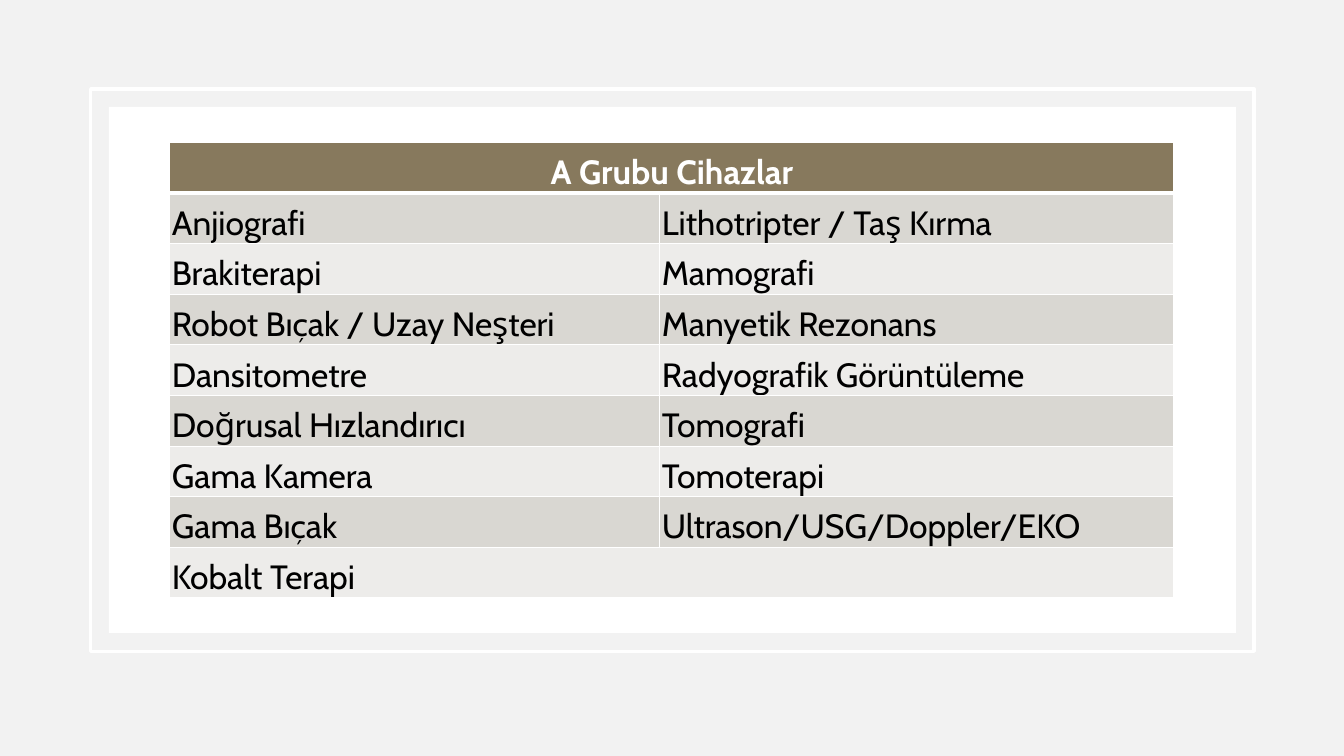
from dataclasses import dataclass

from lxml import etree
from pptx import Presentation
from pptx import util as u
from pptx.dml.color import RGBColor
from pptx.enum import shapes, text
from pptx.oxml import ns

Pt = u.Pt


# Colours and type sizes
@dataclass(frozen=True)
class Theme:
    back: str = "F2F2F2"
    white: str = "FFFFFF"
    ink: str = "000000"
    head: str = "87795D"
    bands: tuple = ("D9D7D2", "EDECEA")
    font: str = "Cabin"
    size: int = 24
    thin: float = 1
    thick: float = 3
    frame: float = 2.5


# Device names, left and right column
TITLE = "A Grubu Cihazlar"
PAIRS = [
    ("Anjiografi", "Lithotripter / Taş Kırma"),
    ("Brakiterapi", "Mamografi"),
    ("Robot Bıçak / Uzay Neşteri", "Manyetik Rezonans"),
    ("Dansitometre", "Radyografik Görüntüleme"),
    ("Doğrusal Hızlandırıcı", "Tomografi"),
    ("Gama Kamera", "Tomoterapi"),
    ("Gama Bıçak", "Ultrason/USG/Doppler/EKO"),
    ("Kobalt Terapi",),
]


def rgb(code):
    return RGBColor.from_string(code)


def apply(item, form):
    for key, value in form.items():
        setattr(item, key, value)


class Deck:
    def __init__(self, theme):
        self.theme = theme
        self.show = Presentation()
        apply(self.show, {"slide_width": Pt(960), "slide_height": Pt(540)})
        self.slide = self.show.slides.add_slide(self.show.slide_layouts[6])
        self.paint(self.slide.background.fill, theme.back)

    def paint(self, fill, code):
        fill.solid()
        fill.fore_color.rgb = rgb(code)

    def panel(self, left, top, width, height, fill=None, line=None):
        box = self.slide.shapes.add_shape(
            shapes.MSO_SHAPE.RECTANGLE, Pt(left), Pt(top), Pt(width), Pt(height))
        box.shadow.inherit = False
        if fill:
            self.paint(box.fill, fill)
        else:
            box.fill.background()
        if line:
            self.paint(box.line.fill, line)
            box.line.width = Pt(self.theme.frame)
        else:
            box.line.fill.background()

    def edge(self, cell, widths):
        props = cell._tc.get_or_add_tcPr()
        for spot, (side, width) in enumerate(zip("LRTB", widths)):
            line = etree.Element(ns.qn(f"a:ln{side}"), w=str(Pt(width)))
            fill = etree.SubElement(line, ns.qn("a:solidFill"))
            etree.SubElement(fill, ns.qn("a:srgbClr"), val=self.theme.white)
            props.insert(spot, line)

    def label(self, cell, words, color, bold, align):
        para = cell.text_frame.paragraphs[0]
        para.alignment = align
        run = para.add_run()
        run.text = words
        apply(run.font, {"name": self.theme.font, "size": Pt(self.theme.size),
                         "bold": bold})
        run.font.color.rgb = rgb(color)

    def table(self, left, top, cols, high, rows):
        look = self.theme
        grid = self.slide.shapes.add_table(
            len(rows), len(cols), Pt(left), Pt(top),
            Pt(sum(cols)), Pt(high * len(rows))).table
        apply(grid, {"first_row": False, "horz_banding": False})
        for col, width in zip(grid.columns, cols):
            col.width = Pt(width)
        form = {"margin_left": Pt(1.5), "margin_right": Pt(1.5),
                "margin_top": Pt(1.5), "margin_bottom": 0,
                "vertical_anchor": text.MSO_ANCHOR.BOTTOM}
        for r, names in enumerate(rows):
            grid.rows[r].height = Pt(high)
            head = r == 0
            above = look.thick if r == 1 else look.thin
            below = look.thick if head else look.thin
            for c in range(len(cols)):
                cell = grid.cell(r, c)
                apply(cell, form)
                self.paint(cell.fill, look.head if head else look.bands[(r - 1) % 2])
                self.edge(cell, (look.thin, look.thin, above, below))
            # A row with one name spans the table
            if len(names) == 1:
                grid.cell(r, 0).merge(grid.cell(r, len(cols) - 1))
            for c, name in enumerate(names):
                self.label(grid.cell(r, c), name,
                           look.white if head else look.ink, head,
                           text.PP_ALIGN.CENTER if head else text.PP_ALIGN.LEFT)


def main():
    look = Theme()
    deck = Deck(look)
    # Outline and white panel
    deck.panel(64.8, 63.4, 830.9, 401.8, line=look.white)
    deck.panel(77.8, 76.3, 805, 375.8, fill=look.white)
    # Device table
    deck.table(121.3, 101.8, (350, 367.2), 36.15, [(TITLE,)] + PAIRS)
    deck.show.save("out.pptx")


if __name__ == "__main__":
    main()
